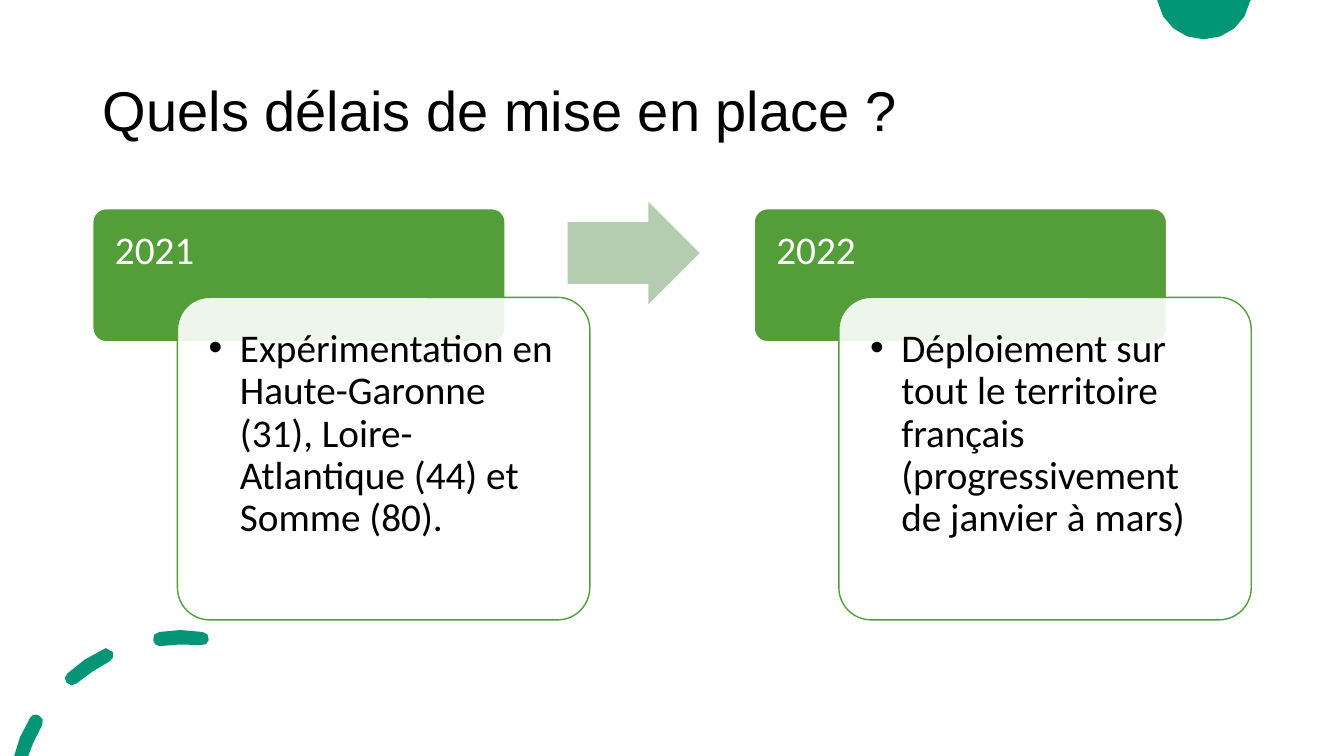
"""Build the rollout timeline slide: two dated steps joined by an arrow."""
from lxml.etree import SubElement
from pptx import Presentation
from pptx.dml.color import RGBColor
from pptx.enum.shapes import MSO_SHAPE as Preset
from pptx.enum.text import MSO_ANCHOR as Anchor, MSO_AUTO_SIZE as AutoSize, PP_ALIGN as Align
from pptx.oxml.ns import qn
from pptx.util import Inches, Pt

GREEN = RGBColor(0x54, 0x9E, 0x39)
PALE_GREEN = RGBColor(0xB4, 0xCC, 0xAF)
TEAL = RGBColor(0x02, 0x96, 0x76)
WHITE = RGBColor(0xFF, 0xFF, 0xFF)
BLACK = RGBColor(0, 0, 0)

STEPS = [
    ("2021", "Expérimentation en Haute-Garonne (31), Loire-Atlantique (44) et Somme (80)."),
    ("2022", "Déploiement sur tout le territoire français (progressivement de janvier à mars)"),
]
FIRST_LEFT, STEP_PITCH = 0.92, 6.56

# Each outline is a start point, then lines (2 numbers) and Bézier curves (6 numbers).
TOP_DISC = [
    [(11.48, 0), (12.41, 0), (12.4, 0.01), (12.36, 0.23, 12.17, 0.39, 11.94, 0.39),
     (11.71, 0.39, 11.52, 0.23, 11.48, 0.01)],
]
DASHED_ARC = [
    [(0.36, 7.09), (0.34, 7.08, 0.31, 7.1, 0.3, 7.12), (0.2, 7.31), (0.14, 7.5), (0.28, 7.5),
     (0.33, 7.37), (0.42, 7.19), (0.44, 7.16, 0.42, 7.11, 0.39, 7.1)],
    [(1.05, 6.43), (1.03, 6.44), (0.9, 6.5, 0.77, 6.58, 0.67, 6.68),
     (0.64, 6.7, 0.63, 6.75, 0.66, 6.77), (0.71, 6.8), (0.76, 6.78),
     (0.86, 6.7, 0.97, 6.62, 1.09, 6.56), (1.12, 6.54, 1.14, 6.5, 1.12, 6.47)],
    [(1.79, 6.25), (1.58, 6.27), (1.54, 6.27, 1.51, 6.31, 1.52, 6.35),
     (1.52, 6.38, 1.55, 6.41, 1.58, 6.41), (1.73, 6.39, 1.86, 6.39, 1.99, 6.4),
     (2.03, 6.41, 2.07, 6.38, 2.07, 6.35), (2.08, 6.31, 2.05, 6.27, 2.01, 6.27)],
]


def outline_points(outline, curve_steps):
    """Flatten an outline's lines and curves into points in EMU."""
    points = [outline[0]]
    for segment in outline[1:]:
        if len(segment) == 2:
            points.append(segment)
            continue
        corners = [points[-1], segment[:2], segment[2:4], segment[4:]]
        for step in range(1, curve_steps + 1):
            t = step / curve_steps
            weights = ((1 - t) ** 3, 3 * t * (1 - t) ** 2, 3 * t * t * (1 - t), t ** 3)
            points.append(tuple(sum(w * corner[axis] for w, corner in zip(weights, corners))
                                for axis in (0, 1)))
    return [(Inches(x), Inches(y)) for x, y in points]


def add_ornament(slide, outlines, curve_steps):
    """Draw closed outlines as one teal freeform."""
    contours = [outline_points(outline, curve_steps) for outline in outlines]
    builder = slide.shapes.build_freeform(*contours[0][0])
    for number, contour in enumerate(contours):
        if number:
            builder.move_to(*contour[0])
        builder.add_line_segments(contour[1:], close=True)
    ornament = builder.convert_to_shape()
    ornament.shadow.inherit = False
    ornament.fill.solid()
    ornament.fill.fore_color.rgb = TEAL
    ornament.line.fill.background()


def add_block(slide, preset, box, adjustments, fill, line=None, opacity=None):
    """Add a filled preset shape, with an optional outline and opacity percentage."""
    block = slide.shapes.add_shape(preset, *map(Inches, box))
    for index, value in enumerate(adjustments):
        block.adjustments[index] = value
    block.shadow.inherit = False
    block.fill.solid()
    block.fill.fore_color.rgb = fill
    if opacity is not None:
        color = block.fill._xPr.find(".//" + qn("a:srgbClr"))
        SubElement(color, qn("a:alpha"), val=str(opacity * 1000))
    if line is None:
        block.line.fill.background()
    else:
        block.line.color.rgb = line
        block.line.width = Pt(1)


def add_label(slide, box, text, color, bottom_inset, bullet=False):
    """Add a wrapped text box holding one paragraph, bulleted on request."""
    frame = slide.shapes.add_textbox(*map(Inches, box)).text_frame
    frame.word_wrap = True
    frame.margin_left = frame.margin_top = frame.margin_right = Inches(0.22)
    frame.margin_bottom = Inches(bottom_inset)
    paragraph = frame.paragraphs[0]
    paragraph.text = text
    paragraph.line_spacing = 0.9
    paragraph.font.size = Pt(28)
    paragraph.font.name = "Calibri"
    paragraph.font.color.rgb = color
    if bullet:
        paragraph.level = 1
        properties = paragraph._p.get_or_add_pPr()
        properties.set("marL", str(Inches(0.31)))
        properties.set("indent", str(-Inches(0.31)))
        bullet_font = SubElement(properties, qn("a:buFont"), typeface="Arial")
        bullet_char = SubElement(properties, qn("a:buChar"), char="•")
        run_defaults = properties.find(qn("a:defRPr"))
        run_defaults.addprevious(bullet_font)
        run_defaults.addprevious(bullet_char)


def add_step(slide, left, year, detail):
    """Add a year banner overlapped by its translucent detail card."""
    add_block(slide, Preset.ROUNDED_RECTANGLE, (left, 2.07, 4.09, 1.32), [0.1], GREEN, WHITE)
    add_label(slide, (left, 2.07, 4.09, 0.88), year, WHITE, 0.12)
    add_block(slide, Preset.ROUNDED_RECTANGLE, (left + 0.84, 2.95, 4.09, 3.2), [0.1],
              WHITE, GREEN, opacity=90)
    add_label(slide, (left + 0.93, 3.04, 3.9, 3.01), detail, BLACK, 0.22, bullet=True)


def set_title(slide, text):
    """Place and format the title placeholder."""
    title = slide.shapes.title
    title.left, title.top, title.width, title.height = map(Inches, (0.92, 0.4, 11.5, 1.45))
    frame = title.text_frame
    frame.auto_size = AutoSize.NONE
    frame.vertical_anchor = Anchor.MIDDLE
    heading = frame.paragraphs[0]
    heading.text = text
    heading.alignment = Align.LEFT
    heading.line_spacing = 0.9
    heading.font.size = Pt(40)
    heading.font.name = "Arial"
    heading.font.color.rgb = BLACK


def main():
    """Assemble and save the slide."""
    deck = Presentation()
    deck.slide_width, deck.slide_height = Inches(13.33), Inches(7.5)
    slide = deck.slides.add_slide(deck.slide_layouts[5])
    add_ornament(slide, TOP_DISC, curve_steps=4)
    add_ornament(slide, DASHED_ARC, curve_steps=2)
    set_title(slide, "Quels délais de mise en place ?")
    for number, (year, detail) in enumerate(STEPS):
        add_step(slide, FIRST_LEFT + number * STEP_PITCH, year, detail)
    add_block(slide, Preset.RIGHT_ARROW, (5.63, 2, 1.31, 1.02), [0.6, 0.5], PALE_GREEN)
    deck.save("out.pptx")


if __name__ == "__main__":
    main()
